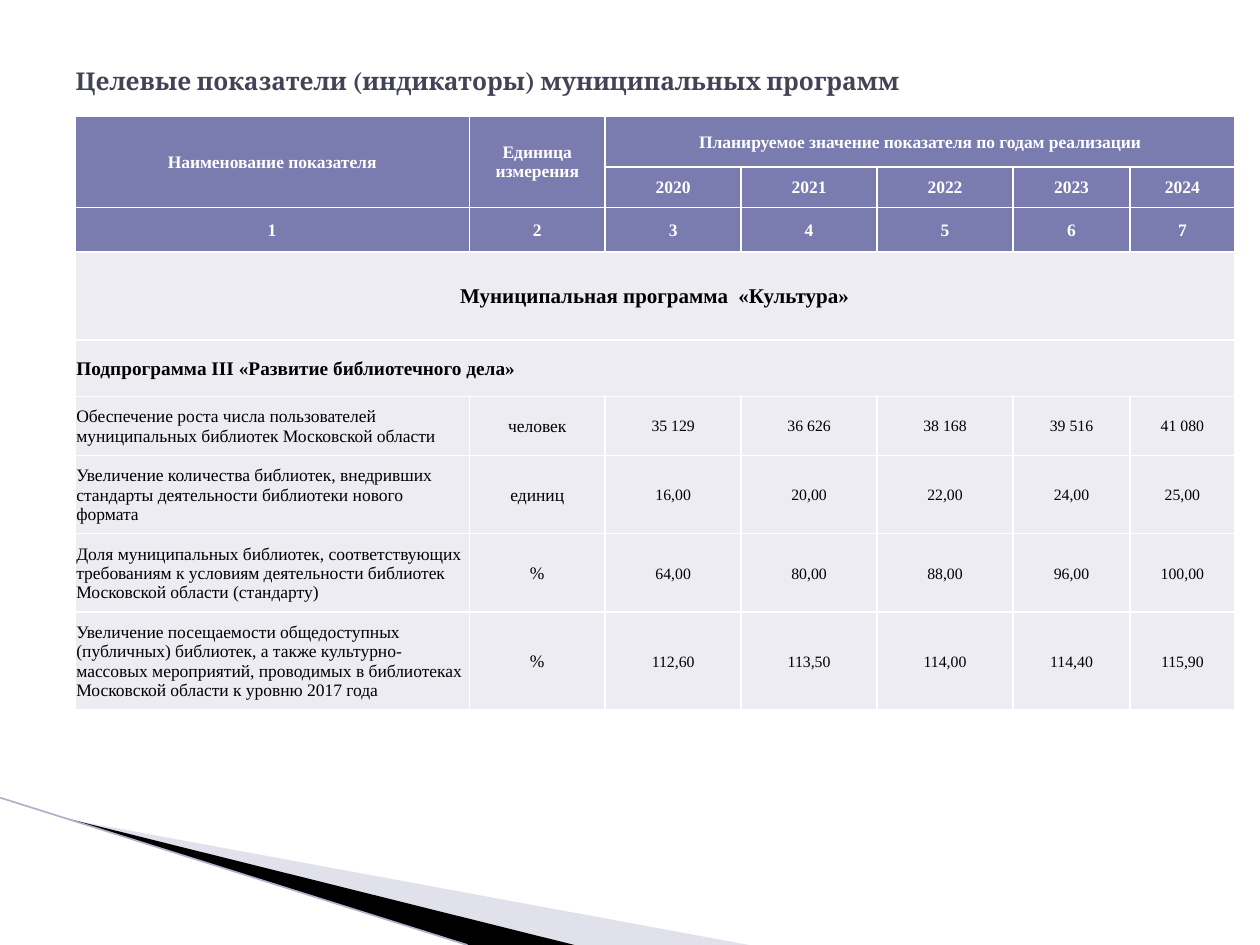
from lxml import etree
from pptx import Presentation
from pptx.dml.color import RGBColor
from pptx.enum import shapes, text
from pptx.oxml import ns
from pptx.util import Cm, Pt

WHITE = RGBColor(0xFF, 0xFF, 0xFF)
BLACK = RGBColor(0, 0, 0)
SLATE = RGBColor(0x42, 0x44, 0x56)
VIOLET = RGBColor(0x7A, 0x7B, 0xAE)
PALE = RGBColor(0xEC, 0xEC, 0xF2)
LILAC = RGBColor(0xB6, 0xB6, 0xD1)
EDGE = RGBColor(0xAF, 0xB0, 0xCC)
SERIF = "Times New Roman"
LEFT, MID = text.PP_ALIGN.LEFT, text.PP_ALIGN.CENTER
COLS = [7.95] + [2.74] * 4 + [2.36, 2.11]
ROWS = [1.03, 0.81, 0.9, 1.77, 1.14, 1.19, 1.58, 1.58, 1.97]
SPANS = [(0, 0, 1, 0), (0, 1, 1, 1), (0, 2, 0, 6), (3, 0, 3, 6), (4, 0, 4, 6)]
HEADS = [
    ["Наименование показателя", "Единица измерения",
     "Планируемое значение показателя по годам реализации"],
    ["", ""] + [str(year) for year in range(2020, 2025)],
    [str(num) for num in range(1, 8)],
]
DATA = [
    ["Обеспечение роста числа пользователей муниципальных библиотек Московской области",
     "человек", "35 129", "36 626", "38 168", "39 516", "41 080"],
    ["Увеличение количества библиотек, внедривших стандарты деятельности библиотеки нового формата",
     "единиц", "16,00", "20,00", "22,00", "24,00", "25,00"],
    ["Доля муниципальных библиотек, соответствующих требованиям к условиям деятельности "
     "библиотек Московской области (стандарту)",
     "%", "64,00", "80,00", "88,00", "96,00", "100,00"],
    ["Увеличение посещаемости общедоступных (публичных) библиотек, а также "
     "культурно-массовых мероприятий, проводимых в библиотеках Московской области "
     "к уровню 2017 года",
     "%", "112,60", "113,50", "114,00", "114,40", "115,90"],
]


def add_run(para, words, face, size, color, bold):
    """Add one formatted run to a paragraph."""
    run = para.add_run()
    run.text = words
    run.font.name, run.font.size, run.font.bold = face, Pt(size), bold
    run.font.color.rgb = color


def add_title(slide, words):
    """Place and fill the title placeholder."""
    box = slide.shapes.title
    box.left, box.top, box.width, box.height = Cm(1.27), Cm(0.76), Cm(22.86), Cm(1.75)
    frame = box.text_frame
    frame.auto_size = text.MSO_AUTO_SIZE.NONE
    frame.vertical_anchor = text.MSO_ANCHOR.MIDDLE
    para = frame.paragraphs[0]
    para.alignment = LEFT
    add_run(para, words, "Cambria", 14, SLATE, True)


def add_wedge(slide, points, color, alpha=None):
    """Draw a filled outline through points given in centimetres."""
    spots = [(Cm(x), Cm(y)) for x, y in points]
    form = slide.shapes.build_freeform(*spots[0])
    form.add_line_segments(spots[1:], close=True)
    wedge = form.convert_to_shape()
    wedge.shadow.inherit = False
    wedge.fill.solid()
    wedge.fill.fore_color.rgb = color
    wedge.line.fill.background()
    if alpha:
        tone = wedge.fill._xPr.find(".//" + ns.qn("a:srgbClr"))
        etree.SubElement(tone, ns.qn("a:alpha"), val=str(alpha * 1000))


def add_edge(slide, start, end):
    """Draw the thin slanted line."""
    line = slide.shapes.add_connector(
        shapes.MSO_CONNECTOR.STRAIGHT, *[Cm(v) for v in start + end])
    line.line.color.rgb = EDGE
    line.line.width = Pt(0.95)
    etree.SubElement(line._element.spPr, ns.qn("a:effectLst"))


def style_cell(cell, color):
    """Set the margins, white borders and fill of a cell."""
    cell.margin_left = cell.margin_right = cell.margin_top = Cm(0.03)
    cell.margin_bottom = 0
    cell.vertical_anchor = text.MSO_ANCHOR.MIDDLE
    props = cell._tc.get_or_add_tcPr()
    for side in ("lnL", "lnR", "lnT", "lnB"):
        line = etree.SubElement(props, ns.qn("a:" + side), w=str(Pt(1)))
        fill = etree.SubElement(line, ns.qn("a:solidFill"))
        etree.SubElement(fill, ns.qn("a:srgbClr"), val=str(WHITE))
    cell.fill.solid()
    cell.fill.fore_color.rgb = color


def fill_cell(cell, words, size, color, bold, align=MID, after=0):
    """Write the words of a cell."""
    para = cell.text_frame.paragraphs[0]
    para.alignment = align
    para.space_after = Pt(after)
    add_run(para, words, SERIF, size, color, bold)


def add_grid(slide):
    """Build the table of indicators."""
    grid = slide.shapes.add_table(
        len(ROWS), len(COLS), Cm(1.51), Cm(2.34), Cm(sum(COLS)), Cm(sum(ROWS))).table
    for col, width in zip(grid.columns, COLS):
        col.width = Cm(width)
    for row, height in zip(grid.rows, ROWS):
        row.height = Cm(height)
    for r in range(len(ROWS)):
        for c in range(len(COLS)):
            style_cell(grid.cell(r, c), VIOLET if r < len(HEADS) else PALE)
    for top, left, low, right in SPANS:
        grid.cell(top, left).merge(grid.cell(low, right))
    for r, row in enumerate(HEADS):
        for c, words in enumerate(row):
            if words:
                fill_cell(grid.cell(r, c), words, 10, WHITE, True)
    fill_cell(grid.cell(3, 0), "Муниципальная программа  «Культура»", 12, BLACK, True)
    fill_cell(grid.cell(4, 0), "Подпрограмма III «Развитие библиотечного дела»",
              11, BLACK, True, LEFT)
    for r, (name, unit, *values) in enumerate(DATA, 5):
        fill_cell(grid.cell(r, 0), name, 10, BLACK, False, LEFT, 10)
        fill_cell(grid.cell(r, 1), unit, 10, BLACK, False)
        for c, value in enumerate(values, 2):
            fill_cell(grid.cell(r, c), value, 9, BLACK, False)


def main():
    """Build and save the slide."""
    deck = Presentation()
    deck.slide_width, deck.slide_height = Cm(25.4), Cm(19.05)
    slide = deck.slides.add_slide(deck.slide_layouts[5])
    add_wedge(slide, [(1.4, 16.52), (15.1, 19.05), (11.58, 19.05)], LILAC, 40)
    add_wedge(slide, [(1.35, 16.5), (11.58, 19.05), (9.45, 19.05)], BLACK)
    add_edge(slide, (0, 16.08), (9.42, 19.05))
    add_title(slide, "Целевые показатели (индикаторы) муниципальных программ")
    add_grid(slide)
    deck.save("out.pptx")


if __name__ == "__main__":
    main()
